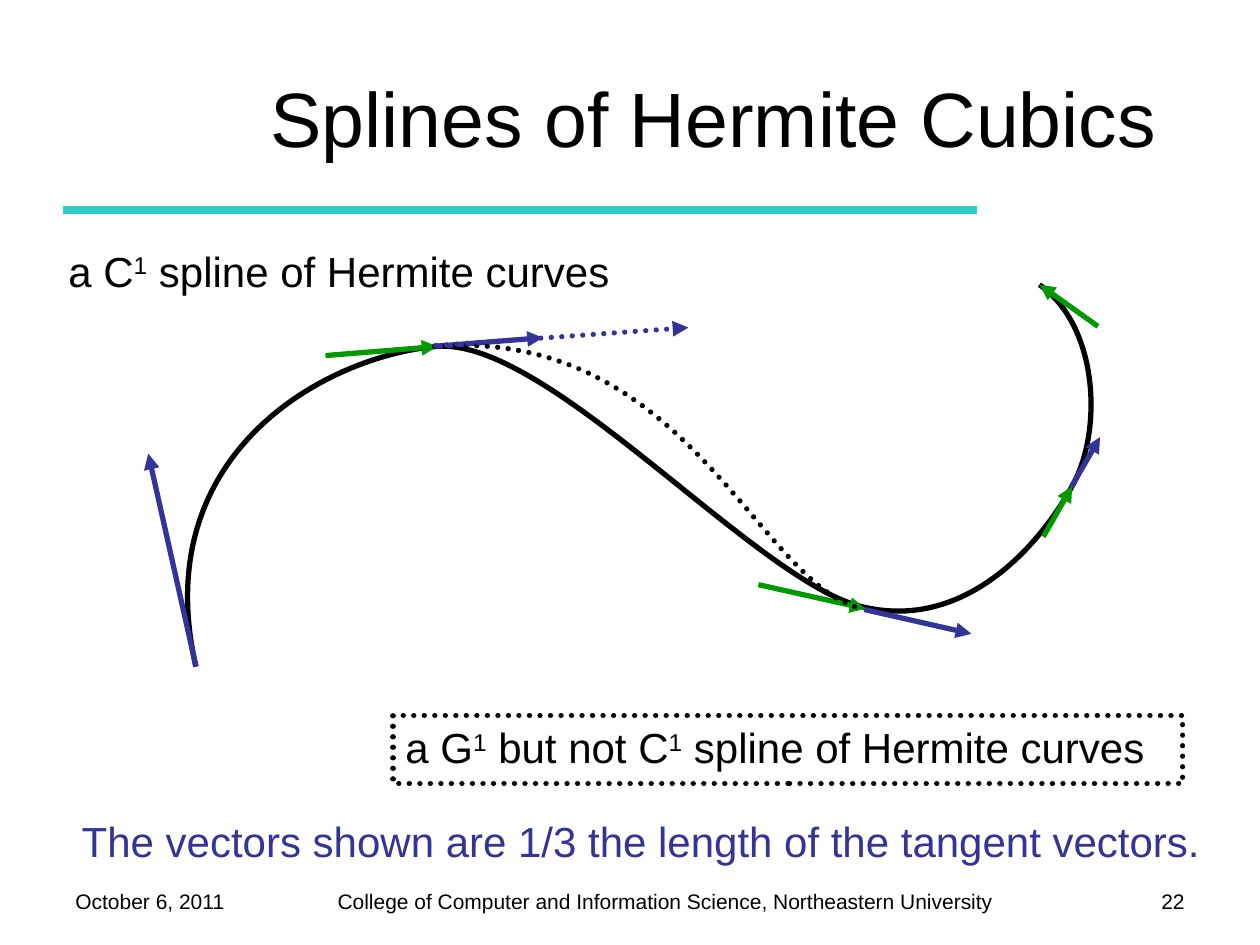
from dataclasses import dataclass

from lxml import etree
from pptx import Presentation
from pptx import util as u
from pptx.dml.color import RGBColor
from pptx.enum import dml, shapes, text
from pptx.oxml import ns

BLACK, BLUE, GREEN, TEAL = "000000", "333399", "009900", "33CCCC"
LEFT, CENTER, RIGHT = text.PP_ALIGN.LEFT, text.PP_ALIGN.CENTER, text.PP_ALIGN.RIGHT

Point = tuple[float, float]


@dataclass
class Label:
    words: str
    box: tuple[float, float, float, float]
    size: float
    color: str = BLACK
    align: text.PP_ALIGN = LEFT
    anchor: text.MSO_ANCHOR = text.MSO_ANCHOR.TOP
    framed: bool = False


@dataclass
class Vector:
    start: Point
    end: Point
    color: str
    dotted: bool = False


FOOTERS = [
    Label("College of Computer and Information Science, Northeastern University",
          (185.8, 504, 396, 21.6), 12),
    Label("October 6, 2011", (36, 504, 126, 24), 12),
    Label("22", (624, 504, 60, 25), 12, align=RIGHT),
]
TITLE = Label("Splines of Hermite Cubics", (132, 21.6, 552, 90), 44,
              align=CENTER, anchor=text.MSO_ANCHOR.MIDDLE)
CAPTIONS = [
    Label("a C^1^ spline of Hermite curves", (32, 136.8, 379.4, 36), 24),
    Label("a G^1^ but not C^1^ spline of Hermite curves",
          (224.6, 408.9, 451.4, 38.9), 24, framed=True),
    Label("The vectors shown are 1/3 the length of the tangent vectors.",
          (39.6, 462.6, 671, 36), 24, BLUE),
]

SPLINE = [
    (112, 380.9), (84, 259.2), (185.8, 203.8), (249.1, 198),
    (313.2, 192.2), (433.4, 334.1), (493.9, 347),
    (554.4, 360.7), (596.9, 307.4), (613.4, 276.5),
    (630, 245.5), (627.8, 186.5), (594, 162.7),
]
G1_CURVE = [(248.4, 198), (393.1, 186.5), (433.4, 334.8), (492.5, 347.8)]

VECTORS = [
    Vector((112, 380.9), (84.7, 259.2), BLUE),
    Vector((247, 198), (310.3, 193), BLUE),
    Vector((493.9, 348.3), (555.1, 362.2), BLUE),
    Vector((612, 278.6), (628.6, 249.8), BLUE),
    Vector((186, 203.2), (250, 198), GREEN),
    Vector((433.4, 334.1), (494.6, 347.8), GREEN),
    Vector((596.2, 306.7), (612.7, 277.9), GREEN),
    Vector((627.4, 186.5), (594, 162.7), GREEN),
]
G1_VECTOR = Vector((249.1, 197.5), (393.4, 187.2), BLUE, True)


def rgb(color: str) -> RGBColor:
    return RGBColor.from_string(color)


def style_line(sp, color: str, width: float = 3, dotted: bool = False):
    sp.line.color.rgb = rgb(color)
    sp.line.width = u.Pt(width)
    ln = sp.line._get_or_add_ln()
    if dotted:
        sp.line.dash_style = dml.MSO_LINE.ROUND_DOT
        ln.set("cap", "rnd")
    return ln


def add_line(parent, start: Point, end: Point):
    sp = parent.add_connector(shapes.MSO_CONNECTOR.STRAIGHT,
                              *map(u.Pt, start + end))
    etree.SubElement(sp._element.spPr, ns.qn("a:effectLst"))
    return sp


def add_vector(parent, v: Vector) -> None:
    ln = style_line(add_line(parent, v.start, v.end), v.color, dotted=v.dotted)
    etree.SubElement(ln, ns.qn("a:tailEnd"), type="triangle")


def add_curve(parent, controls: list[Point], dotted: bool = False) -> None:
    points = [(u.Pt(x), u.Pt(y)) for x, y in controls]
    builder = parent.build_freeform(*points[0])
    builder.add_line_segments(points[1:], close=False)
    sp = builder.convert_to_shape()
    outline = next(sp._element.iter(ns.qn("a:path")))
    segments = outline.findall(ns.qn("a:lnTo"))
    for i in range(0, len(segments), 3):
        cubic = etree.SubElement(outline, ns.qn("a:cubicBezTo"))
        for segment in segments[i:i + 3]:
            cubic.append(segment[0])
            outline.remove(segment)
    sp.shadow.inherit = False
    sp.fill.background()
    style_line(sp, BLACK, dotted=dotted)


def add_label(parent, label: Label) -> None:
    box = map(u.Pt, label.box)
    if label.framed:
        sp = parent.add_shape(shapes.MSO_SHAPE.RECTANGLE, *box)
        sp.shadow.inherit = False
        sp.fill.background()
        style_line(sp, BLACK, dotted=True)
    else:
        sp = parent.add_textbox(*box)
    tf = sp.text_frame
    tf.word_wrap = True
    tf.vertical_anchor = label.anchor
    p = tf.paragraphs[0]
    p.alignment = label.align
    p.font.name = "Arial"
    p.font.size = u.Pt(label.size)
    p.font.color.rgb = rgb(label.color)
    for i, part in enumerate(label.words.split("^")):
        r = p.add_run()
        r.text = part
        if label.framed:
            r.font.color.rgb = rgb(label.color)
        if i % 2:
            r._r.get_or_add_rPr().set("baseline", "30000")


def main() -> None:
    prs = Presentation()
    prs.slide_width, prs.slide_height = u.Pt(720), u.Pt(540)
    s = prs.slides.add_slide(prs.slide_layouts[6])
    style_line(add_line(s.shapes, (36, 120), (558, 120)), TEAL, 4.5)
    for label in [*FOOTERS, TITLE]:
        add_label(s.shapes, label)
    add_curve(s.shapes, SPLINE)
    for vector in VECTORS:
        add_vector(s.shapes, vector)
    g1 = s.shapes.add_group_shape()
    add_curve(g1.shapes, G1_CURVE, dotted=True)
    add_vector(g1.shapes, G1_VECTOR)
    for label in CAPTIONS:
        add_label(s.shapes, label)
    prs.save("out.pptx")


if __name__ == "__main__":
    main()
